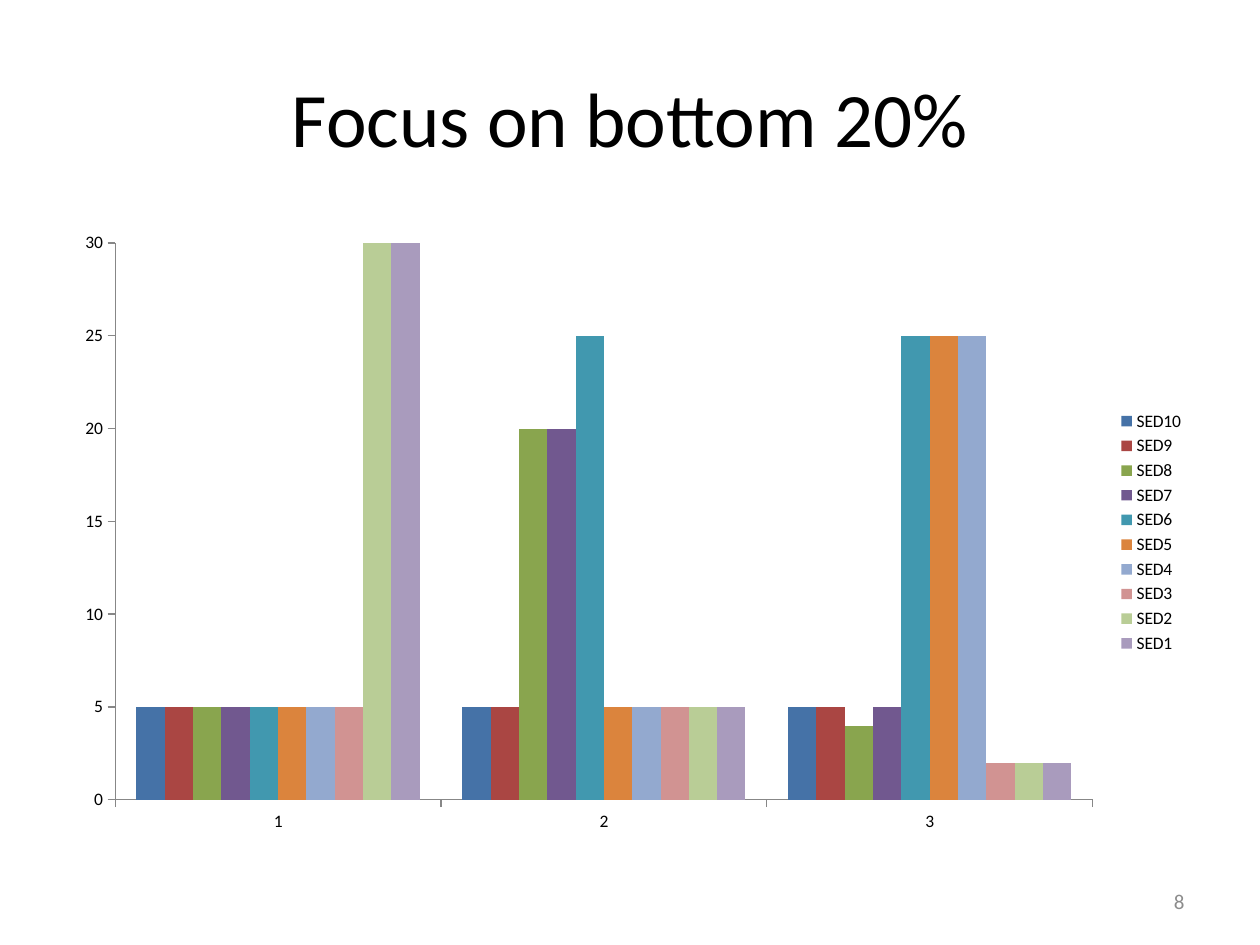
from dataclasses import dataclass

from lxml import etree
from pptx import Presentation
from pptx.chart.data import CategoryChartData
from pptx.dml.color import RGBColor
from pptx.enum.chart import XL_CHART_TYPE, XL_LEGEND_POSITION, XL_TICK_MARK
from pptx.enum.text import MSO_ANCHOR, PP_ALIGN
from pptx.oxml.ns import qn
from pptx.util import Inches, Pt

COLUMNS = XL_CHART_TYPE.COLUMN_CLUSTERED
RIGHT_SIDE = XL_LEGEND_POSITION.RIGHT
OUT, NONE = XL_TICK_MARK.OUTSIDE, XL_TICK_MARK.NONE
MIDDLE = MSO_ANCHOR.MIDDLE
CENTER, RIGHT = PP_ALIGN.CENTER, PP_ALIGN.RIGHT

WIDE, HIGH = 10, 7.5


@dataclass(frozen=True)
class Theme:
    font: str = "Calibri"
    ink: str = "000000"
    muted: str = "8C8C8C"
    axis: str = "878787"
    title: int = 44
    label: int = 10
    number: int = 12
    bars: tuple = ("4572A7", "AA4643", "89A54E", "71588F", "4198AF",
                   "DB843D", "93A9CF", "D19392", "B9CD96", "A99BBD")


THEME = Theme()

# One row per series, one value per category
GROUPS = ("1", "2", "3")
SCORES = {
    "SED10": (5, 5, 5),
    "SED9": (5, 5, 5),
    "SED8": (5, 20, 4),
    "SED7": (5, 20, 5),
    "SED6": (5, 25, 25),
    "SED5": (5, 5, 25),
    "SED4": (5, 5, 25),
    "SED3": (5, 5, 2),
    "SED2": (30, 5, 2),
    "SED1": (30, 5, 2),
}

# Inner plot area as shares of the chart box
PLOT = {"x": 0.046, "y": 0.036, "w": 0.862, "h": 0.893}


def rgb(code):
    return RGBColor.from_string(code)


def style(font, size, color):
    font.name = THEME.font
    font.size = Pt(size)
    font.color.rgb = rgb(color)


def place(shape, box):
    shape.left, shape.top, shape.width, shape.height = map(Inches, box)


def write(shape, text, *, size, color=THEME.ink, align=CENTER):
    frame = shape.text_frame
    frame.word_wrap = True
    frame.vertical_anchor = MIDDLE
    para = frame.paragraphs[0]
    para.alignment = align
    run = para.add_run()
    run.text = text
    style(run.font, size, color)


def add_title(slide, box):
    title = slide.shapes.title
    place(title, box)
    write(title, "Focus on bottom 20%", size=THEME.title)


def add_number(slide, box):
    label = slide.shapes.add_textbox(*map(Inches, box))
    write(label, "8", size=THEME.number, color=THEME.muted, align=RIGHT)


def fix_plot(chart):
    """Pin the inner plot area to its share of the chart box."""
    area = chart._chartSpace.find(".//" + qn("c:plotArea"))
    for old in area.findall(qn("c:layout")):
        area.remove(old)
    layout = etree.Element(qn("c:layout"))
    manual = etree.SubElement(layout, qn("c:manualLayout"))
    parts = {"layoutTarget": "inner", "xMode": "edge", "yMode": "edge", **PLOT}
    for name, value in parts.items():
        etree.SubElement(manual, qn("c:" + name)).set("val", str(value))
    area.insert(0, layout)


def add_bars(slide, box):
    data = CategoryChartData()
    data.categories = GROUPS
    for name, values in SCORES.items():
        data.add_series(name, values)
    chart = slide.shapes.add_chart(COLUMNS, *map(Inches, box), data).chart
    chart.has_title = False
    style(chart.font, THEME.label, THEME.ink)

    # Bars
    plot = chart.plots[0]
    plot.vary_by_categories = False
    plot.gap_width = 150
    plot.overlap = 0
    for series, color in zip(plot.series, THEME.bars):
        series.format.fill.solid()
        series.format.fill.fore_color.rgb = rgb(color)

    # Axes
    for axis in (chart.category_axis, chart.value_axis):
        axis.has_major_gridlines = False
        axis.major_tick_mark = OUT
        axis.minor_tick_mark = NONE
        axis.format.line.color.rgb = rgb(THEME.axis)
        axis.format.line.width = Pt(0.75)
    scale = chart.value_axis
    scale.minimum_scale, scale.maximum_scale, scale.major_unit = 0, 30, 5

    # Legend
    chart.has_legend = True
    chart.legend.position = RIGHT_SIDE
    chart.legend.include_in_layout = False
    fix_plot(chart)


def main():
    deck = Presentation()
    deck.slide_width, deck.slide_height = Inches(WIDE), Inches(HIGH)
    slide = deck.slides.add_slide(deck.slide_layouts.get_by_name("Title Only"))

    # Title and chart share one column between the side margins
    edge = WIDE * 0.05
    span = WIDE - 2 * edge
    add_title(slide, (edge, HIGH * 0.04, span, 1.25))
    add_bars(slide, (edge, 1.75, span, HIGH * 0.66))

    # Page number ends at the right margin
    wide = 2.33
    add_number(slide, (WIDE - edge - wide, 6.95, wide, 0.4))
    deck.save("out.pptx")


if __name__ == "__main__":
    main()
